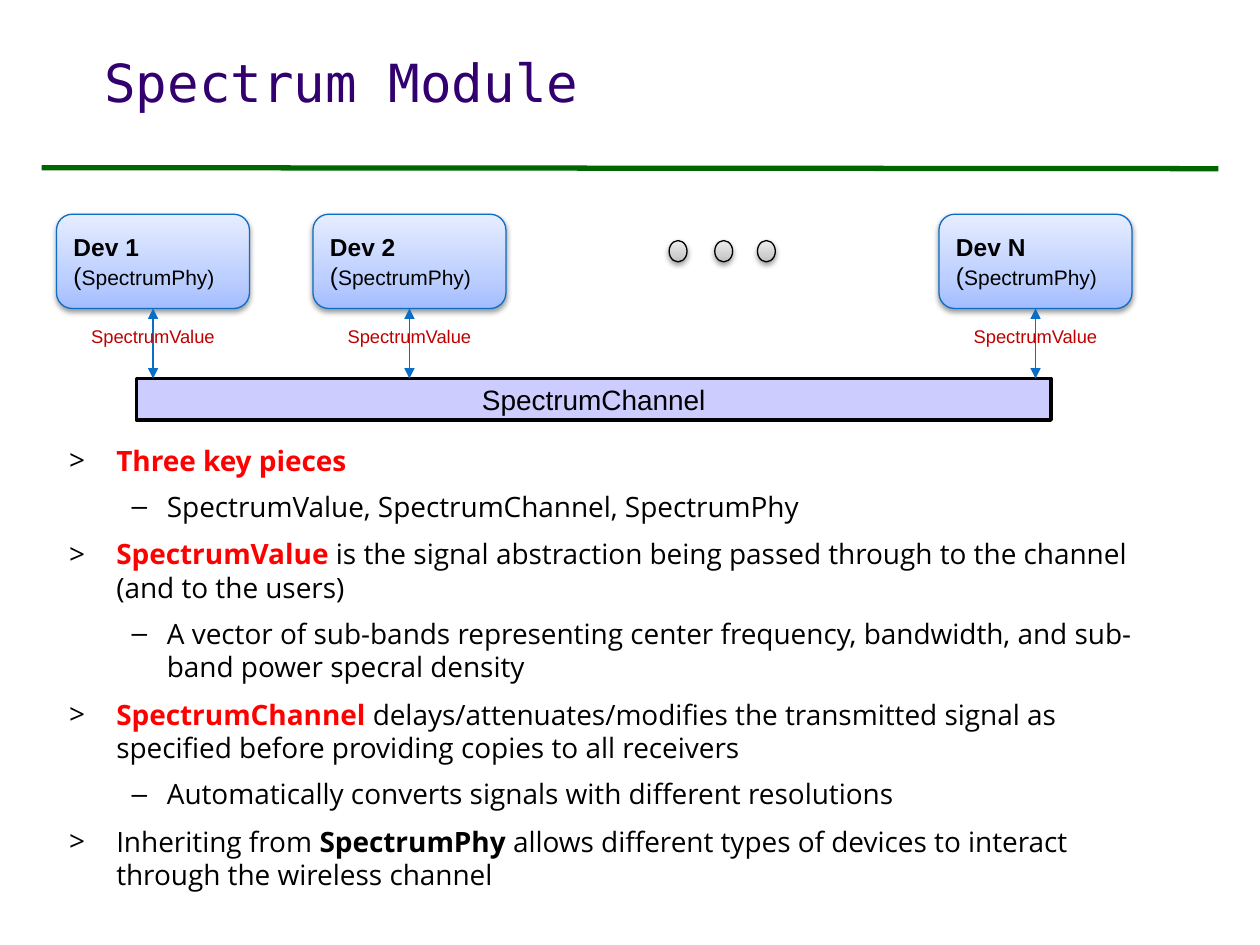
from dataclasses import dataclass

from pptx import Presentation
from pptx.dml.color import RGBColor
from pptx.enum.shapes import MSO_CONNECTOR, MSO_SHAPE
from pptx.enum.text import MSO_ANCHOR, MSO_AUTO_SIZE, PP_ALIGN
from pptx.oxml import parse_xml
from pptx.oxml.ns import nsdecls
from pptx.util import Cm, Pt

RECTANGLE, ROUNDED, OVAL = MSO_SHAPE.RECTANGLE, MSO_SHAPE.ROUNDED_RECTANGLE, MSO_SHAPE.OVAL
STRAIGHT = MSO_CONNECTOR.STRAIGHT
TOP, MIDDLE = MSO_ANCHOR.TOP, MSO_ANCHOR.MIDDLE
LEFT, CENTER = PP_ALIGN.LEFT, PP_ALIGN.CENTER
FIXED = MSO_AUTO_SIZE.NONE

COLORS = {
    "title": "33006F", "rule": "006600", "text": "000000", "key": "FF0000",
    "channel": "CCCCFF", "blue": "0A6DC6", "label": "C00000", "paper": "FFFFFF",
}
BLUE_STOPS = ("A3BDFF", "BED0FF", "E6EDFF")
GRAY_STOPS = ("BDBDBD", "D1D1D1", "EEEEEE")
STOP_POSITIONS = (0, 35, 100)

DEVICE_TOP, DEVICE_WIDTH, DEVICE_HEIGHT = 4.32, 3.89, 1.9
CHANNEL_TOP = 7.63
LABEL_WIDTH = 3.4


@dataclass(frozen=True)
class Span:
    text: str
    color: str = "text"
    bold: bool = False
    size: float = 16
    font: str = "Open Sans"


@dataclass(frozen=True)
class Level:
    margin: float
    hanging: float
    bullet: str
    font: str
    before: float


@dataclass(frozen=True)
class Item:
    level: int
    spans: tuple[Span, ...]


@dataclass(frozen=True)
class Device:
    name: str
    left: float


LEVELS = (Level(0.95, 0.95, ">", "Open Sans", 8), Level(1.97, 0.71, "–", "Arial", 7))
ITEMS = (
    Item(0, (Span("Three key pieces", "key", True),)),
    Item(1, (Span("SpectrumValue, SpectrumChannel, SpectrumPhy"),)),
    Item(0, (Span("SpectrumValue ", "key", True),
             Span("is the signal abstraction being passed through to the channel (and to the users)"))),
    Item(1, (Span("A vector of sub-bands representing center frequency, bandwidth, "
                  "and sub-band power specral density"),)),
    Item(0, (Span("SpectrumChannel ", "key", True),
             Span("delays/attenuates/modifies the transmitted signal as specified "
                  "before providing copies to all receivers"))),
    Item(1, (Span("Automatically converts signals with different resolutions"),)),
    Item(0, (Span("Inheriting from "), Span("SpectrumPhy", bold=True),
             Span(" allows different types of devices to interact through the wireless channel"))),
)
DEVICES = (Device("Dev 1", 1.14), Device("Dev 2", 6.31), Device("Dev N", 18.93))
DOT_LEFTS = (13.49, 14.41, 15.27)


def color(name: str) -> RGBColor:
    return RGBColor.from_string(COLORS[name])


def add_spans(para, spans: tuple[Span, ...]) -> None:
    for span in spans:
        run = para.add_run()
        run.text = span.text
        run.font.name = span.font
        run.font.size = Pt(span.size)
        run.font.bold = span.bold
        run.font.color.rgb = color(span.color)


def place(box, left: float, top: float, width: float, height: float) -> None:
    box.left, box.top, box.width, box.height = Cm(left), Cm(top), Cm(width), Cm(height)


def add_box(page, kind, left: float, top: float, width: float, height: float, line: str, weight: float):
    box = page.shapes.add_shape(kind, Cm(left), Cm(top), Cm(width), Cm(height))
    box.shadow.inherit = False
    box.line.color.rgb = color(line)
    box.line.width = Pt(weight)
    box.text_frame.vertical_anchor = MIDDLE
    return box


def shade(box, stops: tuple[str, ...]) -> None:
    marks = "".join(
        f'<a:gs pos="{position * 1000}"><a:srgbClr val="{stop}"/></a:gs>'
        for position, stop in zip(STOP_POSITIONS, stops)
    )
    properties = box.element.spPr
    properties.insert(2, parse_xml(
        f'<a:gradFill {nsdecls("a")} rotWithShape="1"><a:gsLst>{marks}</a:gsLst>'
        '<a:lin ang="16200000" scaled="0"/></a:gradFill>'))
    properties.find("{*}effectLst").append(parse_xml(
        f'<a:outerShdw {nsdecls("a")} blurRad="40000" dist="20000" dir="5400000" rotWithShape="0">'
        '<a:srgbClr val="000000"><a:alpha val="38000"/></a:srgbClr></a:outerShdw>'))


def add_line(page, start: tuple[float, float], end: tuple[float, float],
             name: str, weight: float, arrows: bool = False) -> None:
    line = page.shapes.add_connector(STRAIGHT, *map(Cm, start + end))
    line.line.color.rgb = color(name)
    line.line.width = Pt(weight)
    if arrows:
        for end_tag in ("headEnd", "tailEnd"):
            line.line._get_or_add_ln().append(
                parse_xml(f'<a:{end_tag} {nsdecls("a")} type="triangle"/>'))
    line.element.spPr.append(parse_xml(f'<a:effectLst {nsdecls("a")}/>'))


def fill_title(box) -> None:
    place(box, 1.85, 1.02, 22.73, 2.74)
    frame = box.text_frame
    frame.auto_size = FIXED
    frame.vertical_anchor = TOP
    para = frame.paragraphs[0]
    para.alignment = LEFT
    para.line_spacing = 0.9
    add_spans(para, (Span("Spectrum Module", "title", size=30, font="DejaVu Sans Mono"),))


def fill_body(box) -> None:
    place(box, 1.14, 8.81, 22.76, 9.4)
    box.fill.solid()
    box.fill.fore_color.rgb = color("paper")
    frame = box.text_frame
    frame.auto_size = FIXED
    for index, item in enumerate(ITEMS):
        para = frame.add_paragraph() if index else frame.paragraphs[0]
        level = LEVELS[item.level]
        para.level = item.level
        properties = para._p.get_or_add_pPr()
        properties.set("marL", str(Cm(level.margin)))
        properties.set("indent", str(-Cm(level.hanging)))
        properties.append(parse_xml(
            f'<a:buClr {nsdecls("a")}><a:srgbClr val="{COLORS["text"]}"/></a:buClr>'))
        properties.append(parse_xml(f'<a:buFont {nsdecls("a")} typeface="{level.font}"/>'))
        properties.append(parse_xml(f'<a:buChar {nsdecls("a")} char="{level.bullet}"/>'))
        para.space_before = Pt(level.before if index else 0)
        add_spans(para, item.spans)


def add_device(page, device: Device) -> None:
    box = add_box(page, ROUNDED, device.left, DEVICE_TOP, DEVICE_WIDTH, DEVICE_HEIGHT, "blue", 0.75)
    shade(box, BLUE_STOPS)
    name, role = box.text_frame.paragraphs[0], box.text_frame.add_paragraph()
    name.alignment = role.alignment = LEFT
    add_spans(name, (Span(device.name, bold=True, size=14, font="Arial"),))
    add_spans(role, (Span("(", size=14, font="Arial"), Span("SpectrumPhy)", size=12, font="Arial")))

    middle = device.left + DEVICE_WIDTH / 2
    add_line(page, (middle, DEVICE_TOP + DEVICE_HEIGHT), (middle, CHANNEL_TOP), "blue", 0.75, True)
    label = page.shapes.add_textbox(Cm(middle - LABEL_WIDTH / 2), Cm(6.43), Cm(LABEL_WIDTH), Cm(0.99))
    label.text_frame.word_wrap = False
    para = label.text_frame.paragraphs[0]
    para.alignment = CENTER
    add_spans(para, (Span("SpectrumValue", "label", size=10.5, font="Arial"),))


def main() -> None:
    deck = Presentation()
    deck.slide_width, deck.slide_height = Cm(25.4), Cm(19.05)
    page = deck.slides.add_slide(deck.slide_layouts[1])
    fill_title(page.shapes.title)
    fill_body(page.placeholders[1])
    add_line(page, (0.84, 3.38), (24.56, 3.4), "rule", 3)

    channel = add_box(page, RECTANGLE, 2.75, CHANNEL_TOP, 18.44, 0.84, "text", 2)
    channel.fill.solid()
    channel.fill.fore_color.rgb = color("channel")
    para = channel.text_frame.paragraphs[0]
    para.alignment = CENTER
    add_spans(para, (Span("SpectrumChannel", font="Arial"),))

    for device in DEVICES:
        add_device(page, device)
    for left in DOT_LEFTS:
        shade(add_box(page, OVAL, left, 4.85, 0.36, 0.43, "text", 0.75), GRAY_STOPS)
    deck.save("out.pptx")


if __name__ == "__main__":
    main()
